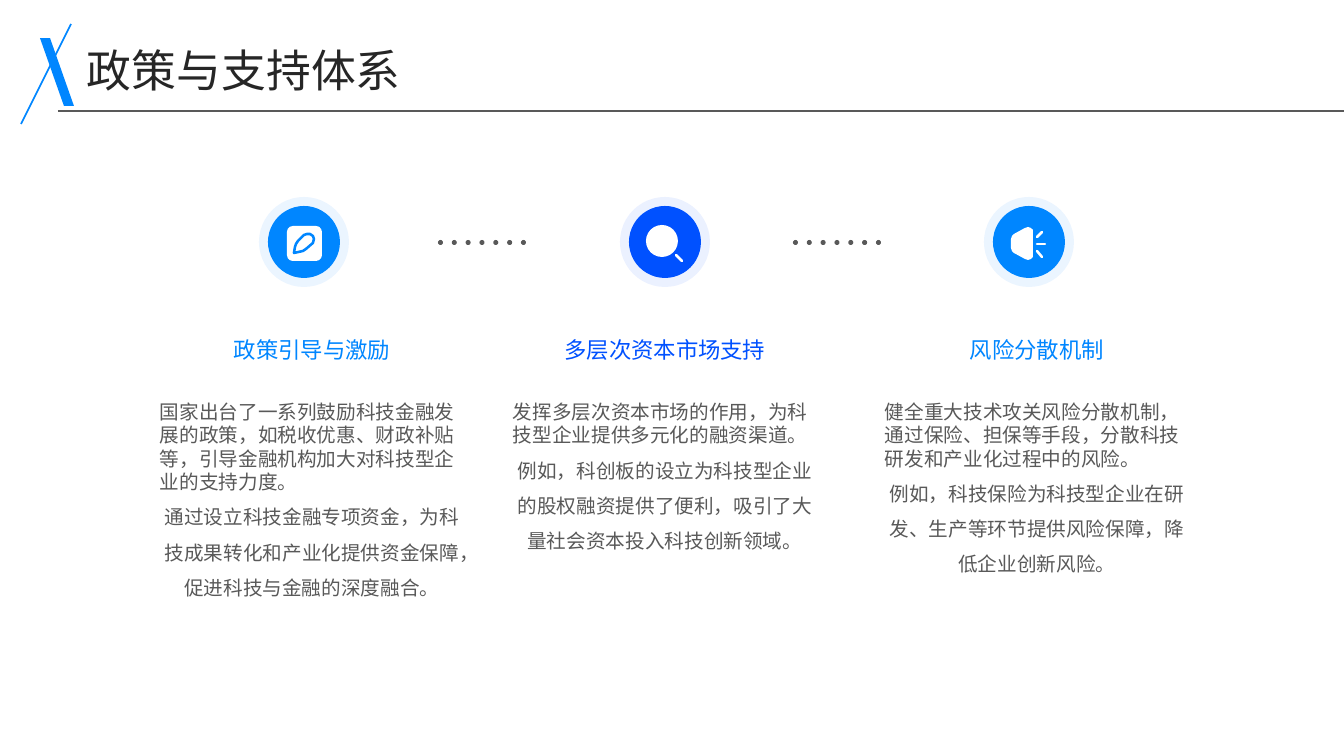
from lxml import etree
from pptx import Presentation
from pptx.dml.color import RGBColor
from pptx.enum.shapes import MSO_CONNECTOR, MSO_SHAPE
from pptx.enum.text import MSO_ANCHOR, PP_ALIGN
from pptx.oxml.ns import qn
from pptx.util import Pt

OVAL, ROUNDED, SLANT = MSO_SHAPE.OVAL, MSO_SHAPE.ROUNDED_RECTANGLE, MSO_SHAPE.PARALLELOGRAM
STRAIGHT = MSO_CONNECTOR.STRAIGHT
LEFT, CENTER = PP_ALIGN.LEFT, PP_ALIGN.CENTER
MIDDLE = MSO_ANCHOR.MIDDLE

SCALE = 12192000 / 1344
THEME = {
    "font": "Noto Sans CJK SC",
    "sky": RGBColor(0x00, 0x86, 0xFF), "royal": RGBColor(0x00, 0x51, 0xFF),
    "gray": RGBColor(0x59, 0x59, 0x59), "ink": RGBColor(0x26, 0x26, 0x26),
    "white": RGBColor(0xFF, 0xFF, 0xFF),
    "title": Pt(32), "heading": Pt(16), "body": Pt(14),
    "line": Pt(1.25), "rule": Pt(0.75), "stroke": Pt(1.8),
}


def px(*lengths):
    """Turn pixel lengths into EMU."""
    return [round(length * SCALE) for length in lengths]


def style_text(para, text, size, color, align, spacing):
    para.text = text
    para.alignment = align
    para.line_spacing = spacing
    span = para.runs[0]
    span.font.size = THEME[size]
    span.font.color.rgb = THEME[color]
    span.font.name = THEME["font"]
    east_asian = etree.SubElement(span.font._element, qn("a:ea"))
    east_asian.set("typeface", THEME["font"])


deck = Presentation()
deck.slide_width, deck.slide_height = px(1344, 756)
page = deck.slides.add_slide(deck.slide_layouts[5])
shapes = page.shapes

# Title
title = shapes.title
title.left, title.top, title.width, title.height = px(87, 43, 1183, 47)
frame = title.text_frame
frame.margin_left = frame.margin_right = frame.margin_top = frame.margin_bottom = 0
frame.vertical_anchor = MIDDLE
frame.word_wrap = True
style_text(frame.paragraphs[0], "政策与支持体系", "title", "ink", LEFT, 1.1)

# Preset shapes: kind, left, top, width, height, colour, alpha percent
columns = [
    {"left": 150, "icon": 259, "color": "sky", "heading": "政策引导与激励",
     "body": ["国家出台了一系列鼓励科技金融发展的政策，如税收优惠、财政补贴等，引导金融机构加大对科技型企业的支持力度。",
              "通过设立科技金融专项资金，为科技成果转化和产业化提供资金保障，促进科技与金融的深度融合。"]},
    {"left": 503, "icon": 620, "color": "royal", "heading": "多层次资本市场支持",
     "body": ["发挥多层次资本市场的作用，为科技型企业提供多元化的融资渠道。",
              "例如，科创板的设立为科技型企业的股权融资提供了便利，吸引了大量社会资本投入科技创新领域。"]},
    {"left": 875, "icon": 984, "color": "sky", "heading": "风险分散机制",
     "body": ["健全重大技术攻关风险分散机制，通过保险、担保等手段，分散科技研发和产业化过程中的风险。",
              "例如，科技保险为科技型企业在研发、生产等环节提供风险保障，降低企业创新风险。"]},
]
presets = [(OVAL, start + i * 83 / 6, 240, 5, 5, "gray", 100)
           for start in (438, 793) for i in range(7)]
for column in columns:
    presets.append((OVAL, column["icon"], 197, 90, 90, column["color"], 8))
    presets.append((OVAL, column["icon"] + 9, 206, 72, 72, column["color"], 100))
presets += [
    (ROUNDED, 287, 226, 35, 35, "white", 100),
    (OVAL, 646, 225, 32, 32, "white", 100),
    (SLANT, 40, 38, 34, 68, "sky", 100),
]
for kind, left, top, width, height, color, alpha in presets:
    shape = shapes.add_shape(kind, *px(left, top, width, height))
    shape.shadow.inherit = False
    shape.fill.solid()
    shape.fill.fore_color.rgb = THEME[color]
    shape.line.fill.background()
    if alpha < 100:
        tint = shape._element.spPr.find(".//" + qn("a:srgbClr"))
        etree.SubElement(tint, qn("a:alpha")).set("val", str(alpha * 1000))
    if kind == SLANT:
        shape.adjustments[0] = 0.705
        shape._element.spPr.xfrm.set("flipH", "1")

# Pen and loudspeaker outlines
pen = [(294, 253), (295, 247), (296, 244), (298, 241), (304, 235), (307, 234),
       (310, 234), (313, 236), (314, 239), (313, 243), (306, 249), (303, 251)]
speaker_top = [(1011, 239), (1012, 236), (1014, 234), (1025, 228), (1028, 227),
               (1031, 228), (1033, 230), (1033, 233)]
speaker = speaker_top + [(x, 487 - y) for x, y in reversed(speaker_top)]
for points, outline in ((pen, "sky"), (speaker, "white")):
    builder = shapes.build_freeform(*points[0], scale=SCALE)
    builder.add_line_segments(points[1:], close=True)
    shape = builder.convert_to_shape()
    shape.shadow.inherit = False
    shape.fill.solid()
    shape.fill.fore_color.rgb = THEME["white"]
    if outline == "white":
        shape.line.fill.background()
    else:
        shape.line.color.rgb = THEME[outline]
        shape.line.width = THEME["stroke"]

# Title lines, magnifier handle and sound rays
lines = [
    ((71, 24, 21, 124), "sky", "line"),
    ((58, 111, 1344, 111), "gray", "rule"),
    ((676, 255, 682, 261), "white", "stroke"),
    ((1037, 237, 1042, 232), "white", "stroke"),
    ((1037, 244, 1045, 244), "white", "stroke"),
    ((1037, 251, 1042, 257), "white", "stroke"),
]
for ends, color, width in lines:
    connector = shapes.add_connector(STRAIGHT, *px(*ends))
    connector.line.color.rgb = THEME[color]
    connector.line.width = THEME[width]
    if width == "stroke":
        connector.line._ln.set("cap", "rnd")
    etree.SubElement(connector._element.spPr, qn("a:effectLst"))

# Headings and body text
for column in columns:
    box = shapes.add_textbox(*px(column["left"], 307, 324, 78))
    frame = box.text_frame
    frame.word_wrap = True
    frame.vertical_anchor = MIDDLE
    style_text(frame.paragraphs[0], column["heading"], "heading", column["color"], CENTER, 1.3)

    box = shapes.add_textbox(*px(column["left"], 395, 324, 250))
    frame = box.text_frame
    frame.word_wrap = True
    policy, example = column["body"]
    style_text(frame.paragraphs[0], policy, "body", "gray", LEFT, Pt(16.7))
    style_text(frame.add_paragraph(), example, "body", "gray", CENTER, Pt(25.2))

deck.save("out.pptx")
